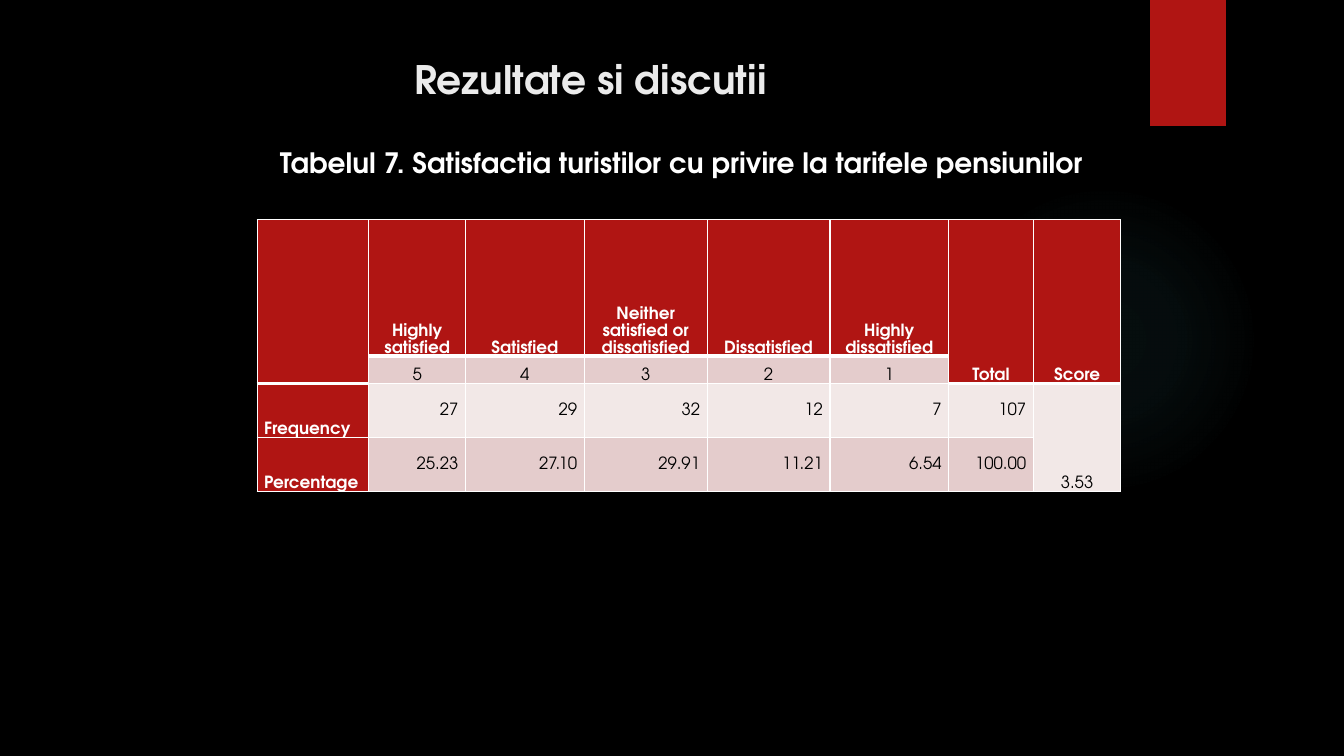
from dataclasses import dataclass
from lxml.etree import SubElement
from pptx import Presentation
from pptx.dml.color import RGBColor as RGB
from pptx.enum.shapes import MSO_SHAPE as SHAPE
from pptx.enum.text import MSO_ANCHOR as ANCHOR, PP_ALIGN as ALIGN
from pptx.oxml import parse_xml
from pptx.oxml.ns import nsdecls, qn
from pptx.util import Inches, Pt


@dataclass(frozen=True)
class Theme:
    """Colours, typeface and type sizes."""
    font: str = "TeX Gyre Adventor"
    black: str = "000000"
    white: str = "FFFFFF"
    title: str = "EBEBEB"
    red: str = "B01513"
    glow: str = "50B9C1"
    band_dark: str = "E4CCCC"
    band_light: str = "F2E8E7"
    title_size: int = 28
    caption_size: int = 20
    cell_size: int = 12
    thin: int = 1
    thick: int = 3


T = Theme()
W, H = Inches(13.333), Inches(7.5)

HEADERS = ["", "Highly satisfied", "Satisfied", "Neither satisfied or dissatisfied",
           "Dissatisfied", "Highly dissatisfied", "Total", "Score"]
ROWS = [
    HEADERS,
    ["", "5", "4", "3", "2", "1", "", ""],
    ["Frequency", "27", "29", "32", "12", "7", "107", "3.53"],
    ["Percentage", "25.23", "27.10", "29.91", "11.21", "6.54", "100.00", ""],
]
COL_WEIGHTS = [1.11, 0.96, 1.18, 1.22, 1.22, 1.18, 0.84, 0.87]
ROW_WEIGHTS = [1.36, 0.27, 0.54, 0.54]
TALL_HEADERS = (0, 6, 7)
SCORE = 7


def area(left, top, width, height):
    """Turn percentages of the slide into a box."""
    return (int(W * left / 100), int(H * top / 100),
            int(W * width / 100), int(H * height / 100))


def style(p, size, color, bold, align):
    """Format a paragraph and its runs."""
    p.alignment = align
    for r in p.runs:
        r.font.name, r.font.size, r.font.bold = T.font, Pt(size), bold
        r.font.color.rgb = RGB.from_string(color)


def add_glow(slide, box):
    """Draw the soft round glow behind the table."""
    sp = slide.shapes.add_shape(SHAPE.OVAL, *box)
    sp.shadow.inherit = False
    sp.line.fill.background()
    stops = "".join(
        f'<a:gs pos="{pos}000"><a:srgbClr val="{T.glow}"><a:alpha val="{alpha}000"/></a:srgbClr></a:gs>'
        for pos, alpha in ((0, 7), (36, 6), (69, 0), (100, 0)))
    sp._element.spPr.find(qn("a:prstGeom")).addnext(parse_xml(
        f'<a:gradFill {nsdecls("a")} rotWithShape="1"><a:gsLst>{stops}</a:gsLst><a:path path="circle">'
        '<a:fillToRect l="50000" t="50000" r="50000" b="50000"/></a:path></a:gradFill>'))


def add_ribbon(slide, box):
    """Draw the red ribbon with its slight shadow."""
    sp = slide.shapes.add_shape(SHAPE.RECTANGLE, *box)
    sp.shadow.inherit = False
    sp.fill.solid()
    sp.fill.fore_color.rgb = RGB.from_string(T.red)
    sp.line.fill.background()
    sp._element.spPr.find(qn("a:effectLst")).append(parse_xml(
        f'<a:outerShdw {nsdecls("a")} blurRad="{Pt(3)}" dist="{Pt(2)}" dir="5400000" rotWithShape="0">'
        f'<a:srgbClr val="{T.black}"><a:alpha val="45000"/></a:srgbClr></a:outerShdw>'))


def add_heading(slide, box, text, size, color):
    """Write one centred bold line at the top of the box."""
    tf = slide.shapes.add_textbox(*box).text_frame
    tf.word_wrap = True
    tf.text = text
    style(tf.paragraphs[0], size, color, True, ALIGN.CENTER)


def set_borders(cell, row, col):
    """Rule the cell in white, heavier where the header ends."""
    header_end = 1 if col in TALL_HEADERS else 0
    heavy = {"T": row == header_end + 1, "B": row in (0, header_end)}
    tcPr = cell._tc.get_or_add_tcPr()
    for i, side in enumerate("LRTB"):
        width = T.thick if heavy.get(side) else T.thin
        tcPr.insert(i, parse_xml(
            f'<a:ln{side} {nsdecls("a")} w="{Pt(width)}"><a:solidFill>'
            f'<a:srgbClr val="{T.white}"/></a:solidFill></a:ln{side}>'))


def fill_cell(cell, row, col, text):
    """Write, colour and rule one table cell."""
    header = row == 0 or col == 0 or (row == 1 and col in TALL_HEADERS)
    number = row > 1 and 0 < col < SCORE
    cell.margin_left = cell.margin_right = Inches(0.07)
    cell.margin_top = cell.margin_bottom = 0
    cell.vertical_anchor = ANCHOR.MIDDLE if number else ANCHOR.BOTTOM
    cell.fill.solid()
    light = row == 2 or (row == 3 and col == SCORE)
    fill = T.red if header else T.band_light if light else T.band_dark
    cell.fill.fore_color.rgb = RGB.from_string(fill)
    p = cell.text_frame.paragraphs[0]
    if text:
        p.text = text
    else:
        SubElement(p._p, qn("a:endParaRPr")).set("sz", str(T.cell_size * 100))
    p.line_spacing = 1.07
    align = ALIGN.RIGHT if number else ALIGN.LEFT if col == 0 else ALIGN.CENTER
    style(p, T.cell_size, T.white if header else T.black, header, align)
    set_borders(cell, row, col)


def add_satisfaction_table(slide, box):
    """Lay out the satisfaction table in the box."""
    table = slide.shapes.add_table(len(ROWS), len(HEADERS), *box).table
    for col, weight in zip(table.columns, COL_WEIGHTS):
        col.width = int(box[2] * weight / sum(COL_WEIGHTS))
    for row, weight in zip(table.rows, ROW_WEIGHTS):
        row.height = int(box[3] * weight / sum(ROW_WEIGHTS))
    for i, texts in enumerate(ROWS):
        for j, text in enumerate(texts):
            fill_cell(table.cell(i, j), i, j, text)
    for j in TALL_HEADERS:
        table.cell(0, j).merge(table.cell(1, j))
    table.cell(2, SCORE).merge(table.cell(3, SCORE))


def add_results_slide(prs):
    """Build the results slide."""
    slide = prs.slides.add_slide(prs.slide_layouts[6])
    slide.background.fill.solid()
    slide.background.fill.fore_color.rgb = RGB.from_string(T.black)
    add_glow(slide, area(70.59, 24.4, 23.11, 41.07))
    add_ribbon(slide, area(85.58, 0, 5.63, 16.67))
    add_heading(slide, area(5.33, 6.67, 77.18, 9.33),
                "Rezultate si discutii", T.title_size, T.title)
    add_heading(slide, area(8.1, 18.53, 85.2, 73.73),
                "Tabelul 7. Satisfactia turistilor cu privire la tarifele pensiunilor",
                T.caption_size, T.white)
    add_satisfaction_table(slide, area(19.13, 29.07, 64.28, 36))


def main():
    """Create and save the presentation."""
    prs = Presentation()
    prs.slide_width, prs.slide_height = W, H
    add_results_slide(prs)
    prs.save("out.pptx")


if __name__ == "__main__":
    main()
